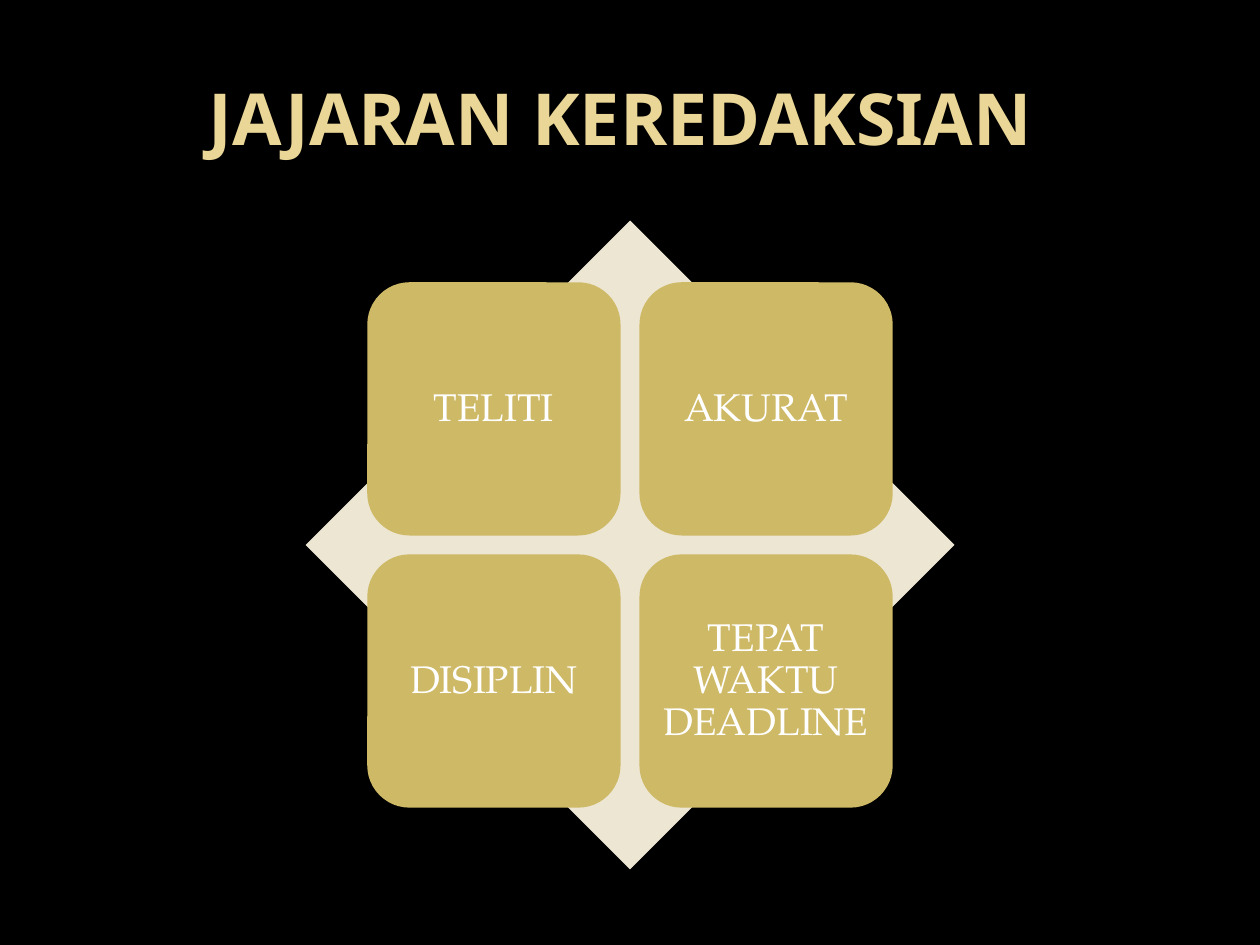
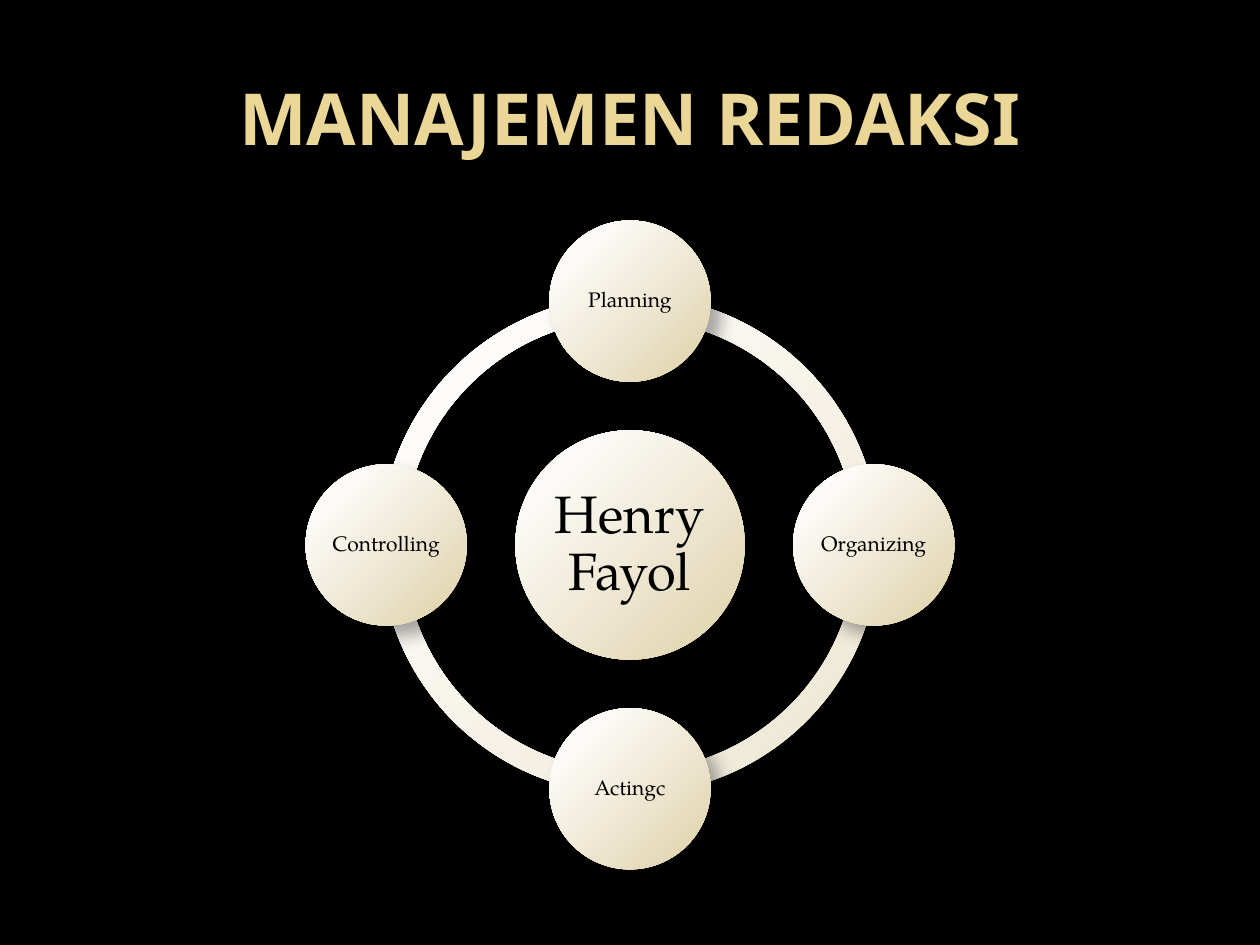
from dataclasses import dataclass

from lxml.etree import SubElement
from pptx import Presentation
from pptx.dml.color import RGBColor
from pptx.enum.shapes import MSO_SHAPE as Preset
from pptx.enum.text import MSO_ANCHOR as Anchor, PP_ALIGN as Align
from pptx.oxml.ns import qn
from pptx.shapes.autoshape import Shape
from pptx.slide import Slide
from pptx.util import Inches, Pt

BLACK = RGBColor(0x00, 0x00, 0x00)
WHITE = RGBColor(0xFF, 0xFF, 0xFF)
TITLE_GOLD = RGBColor(0xEA, 0xD6, 0x96)
TILE_GOLD = RGBColor(0xCE, 0xB9, 0x66)
DIAMOND_CREAM = RGBColor(0xED, 0xE6, 0xD3)
RING_COLORS = (RGBColor(0xFD, 0xFC, 0xFA), RGBColor(0xEC, 0xE5, 0xD1))
DISC_COLORS = (RGBColor(0xFB, 0xFA, 0xF6), RGBColor(0xDE, 0xD1, 0xA8))

TITLE_FONT = "Noto Sans"
BODY_FONT = "TeX Gyre Pagella"

CENTER_X, CENTER_Y = 5.0, 4.325
DIAGRAM_SIZE = 5.15

TILE_SIZE = 2.01
TILE_OFFSET = 1.08
QUALITIES = (("TELITI", "AKURAT"), ("DISIPLIN", "TEPAT WAKTU DEADLINE"))

RING_SIZE = 3.96
RING_THICKNESS = 0.046
QUARTER_TURN = 54  # 90 degrees in block arc adjustment units
HUB_SIZE = 1.82
DISC_SIZE = 1.28
ORBIT = 1.935


@dataclass(frozen=True)
class Label:
    text: str
    size: int
    color: RGBColor
    inset: float


@dataclass(frozen=True)
class Disc:
    label: Label
    diameter: float
    dx: float = 0
    dy: float = 0


def stage(name: str, dx: float, dy: float) -> Disc:
    return Disc(Label(name, 12, BLACK, 0.02), DISC_SIZE, dx * ORBIT, dy * ORBIT)


DISCS = (
    Disc(Label("Henry Fayol", 30, BLACK, 0.04), HUB_SIZE),
    stage("Planning", 0, -1),
    stage("Organizing", 1, 0),
    stage("Actingc", 0, 1),
    stage("Controlling", -1, 0),
)


def add_titled_page(deck: Presentation, title: str) -> Slide:
    page = deck.slides.add_slide(deck.slide_layouts[5])
    box = page.shapes.title
    box.left, box.top = Inches(0.5), Inches(0.3)
    box.width, box.height = Inches(9), Inches(1.25)
    frame = box.text_frame
    frame.text = title
    frame.vertical_anchor = Anchor.MIDDLE
    para = frame.paragraphs[0]
    para.alignment = Align.CENTER
    font = para.runs[0].font
    font.name, font.size, font.bold = TITLE_FONT, Pt(41), True
    font.color.rgb = TITLE_GOLD
    return page


def add_centered(page: Slide, preset: Preset, size: float,
                 dx: float = 0, dy: float = 0) -> Shape:
    """Add a square shape, offset from the centre of the diagram."""
    shape = page.shapes.add_shape(
        preset, Inches(CENTER_X + dx - size / 2), Inches(CENTER_Y + dy - size / 2),
        Inches(size), Inches(size))
    shape.line.fill.background()
    shape.shadow.inherit = False
    return shape


def fill_solid(shape: Shape, color: RGBColor) -> None:
    shape.fill.solid()
    shape.fill.fore_color.rgb = color


def fill_glow(shape: Shape, colors: tuple[RGBColor, RGBColor]) -> None:
    """Fill with a gradient from the upper left corner and cast a soft shadow."""
    shape.fill.gradient()
    for stop, color, position in zip(shape.fill.gradient_stops, colors, (0.2, 1)):
        stop.color.rgb = color
        stop.position = position
    properties = shape.element.spPr
    gradient = properties.find(qn("a:gradFill"))
    gradient.remove(gradient.find(qn("a:lin")))
    circle = SubElement(gradient, qn("a:path"), {"path": "circle"})
    SubElement(circle, qn("a:fillToRect"),
               {"l": "-15000", "t": "-15000", "r": "115000", "b": "115000"})

    shadow = SubElement(
        properties.find(qn("a:effectLst")), qn("a:outerShdw"),
        {"blurRad": "130000", "dist": "101600", "dir": "2700000",
         "algn": "tl", "rotWithShape": "0"})
    shade = SubElement(shadow, qn("a:srgbClr"), {"val": str(BLACK)})
    SubElement(shade, qn("a:alpha"), {"val": "35000"})


def write_label(shape: Shape, label: Label) -> None:
    frame = shape.text_frame
    frame.text = label.text
    frame.word_wrap = True
    frame.vertical_anchor = Anchor.MIDDLE
    frame.margin_left = frame.margin_right = Inches(label.inset)
    frame.margin_top = frame.margin_bottom = Inches(label.inset)
    para = frame.paragraphs[0]
    para.alignment = Align.CENTER
    para.line_spacing = 0.9
    font = para.runs[0].font
    font.name, font.size = BODY_FONT, Pt(label.size)
    font.color.rgb = label.color


def build_qualities_page(deck: Presentation) -> None:
    page = add_titled_page(deck, "JAJARAN KEREDAKSIAN ")
    fill_solid(add_centered(page, Preset.DIAMOND, DIAGRAM_SIZE), DIAMOND_CREAM)
    for row, dy in zip(QUALITIES, (-TILE_OFFSET, TILE_OFFSET)):
        for quality, dx in zip(row, (-TILE_OFFSET, TILE_OFFSET)):
            tile = add_centered(page, Preset.ROUNDED_RECTANGLE, TILE_SIZE, dx, dy)
            fill_solid(tile, TILE_GOLD)
            write_label(tile, Label(quality, 22, WHITE, 0.09))


def build_management_page(deck: Presentation) -> None:
    page = add_titled_page(deck, "MANAJEMEN REDAKSI")
    for quarter in (2, 1, 0, 3):
        arc = add_centered(page, Preset.BLOCK_ARC, RING_SIZE)
        arc.adjustments[0] = quarter * QUARTER_TURN
        arc.adjustments[1] = (quarter + 1) % 4 * QUARTER_TURN
        arc.adjustments[2] = RING_THICKNESS
        fill_glow(arc, RING_COLORS)
    for disc in DISCS:
        circle = add_centered(page, Preset.OVAL, disc.diameter, disc.dx, disc.dy)
        fill_glow(circle, DISC_COLORS)
        write_label(circle, disc.label)


def main() -> None:
    deck = Presentation()
    deck.slide_width, deck.slide_height = Inches(10), Inches(7.5)
    backdrop = deck.slide_master.background.fill
    backdrop.solid()
    backdrop.fore_color.rgb = BLACK
    build_qualities_page(deck)
    build_management_page(deck)
    deck.save("out.pptx")


if __name__ == "__main__":
    main()
